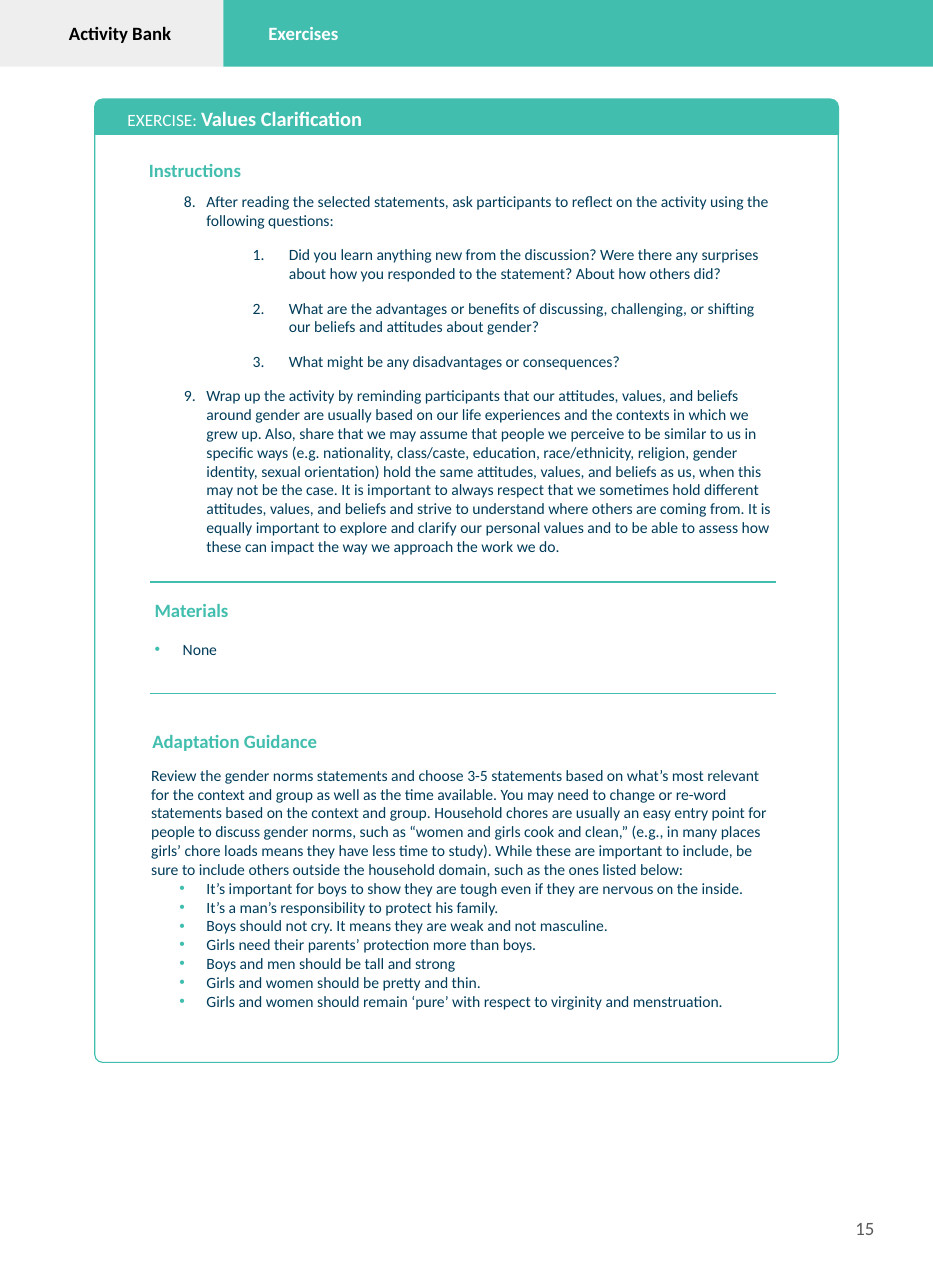
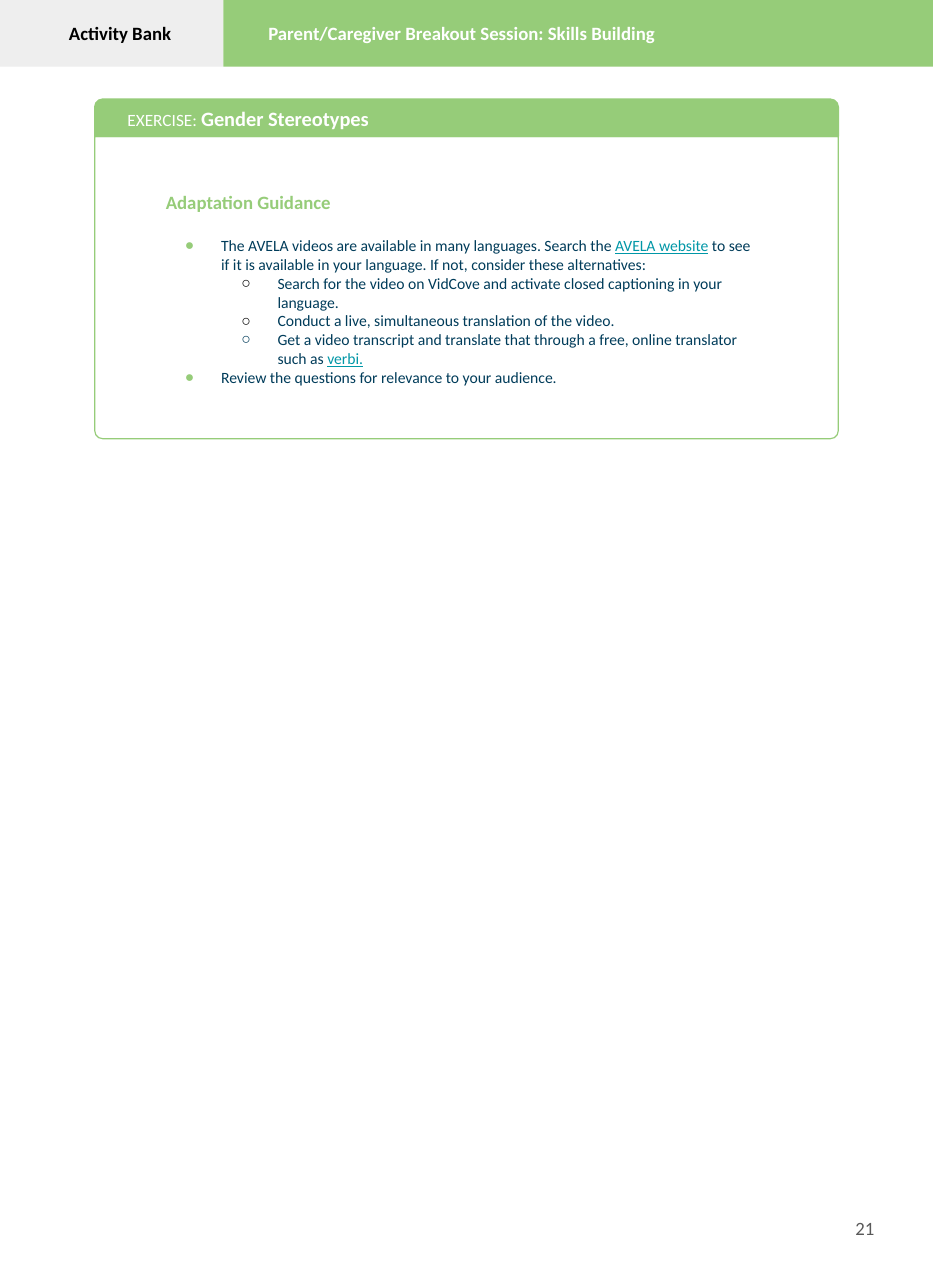
import pptx
import pptx.util
import pptx.dml.color
import pptx.enum.shapes
import pptx.enum.text
import pptx.oxml.ns
from lxml import etree
from dataclasses import dataclass

Inches = pptx.util.Inches
Pt = pptx.util.Pt
MSO_SHAPE = pptx.enum.shapes.MSO_SHAPE
ALIGN = pptx.enum.text.PP_ALIGN
ANCHOR = pptx.enum.text.MSO_ANCHOR


@dataclass(frozen=True)
class Theme:
    font: str = "Calibri"
    teal: str = "42BEAF"
    green: str = "96CC79"
    navy: str = "003C5A"
    link: str = "0097A7"
    grey: str = "EEEEEE"
    number: str = "595959"
    black: str = "000000"
    white: str = "FFFFFF"
    body: int = 10
    label: int = 11
    heading: int = 12
    title: int = 13


THEME = Theme()
BODY = dict(size=THEME.body, color=THEME.navy)
LINK = dict(color=THEME.link, underline=True)

# Shared frame, in inches
WIDTH, HEIGHT = 8.27, 11.42
BAND_HEIGHT, BAND_SPLIT = 0.59, 1.98
PANEL_LEFT, PANEL_TOP, PANEL_WIDTH, CORNER = 0.84, 0.88, 6.59, 0.07
RULE_LEFT, RULE_RIGHT = 1.33, 6.88

# List styles: left margin, hanging indent, bullet and so on
STEP = dict(left=0.27, hang=0.2, bullet_color=THEME.navy)
QUESTION = dict(left=1, hang=0.32, level=1, number=1, before=10,
                bullet_color=THEME.navy)
CIRCLE = dict(left=1, hang=0.32, level=1, bullet="○", bullet_color=THEME.black)


def dot(color, left, hang, bullet="•", **more):
    return dict(left=left, hang=hang, bullet=bullet, bullet_color=color, **more)


def heading(text, color):
    return text, dict(size=THEME.heading, color=color, bold=True, left=0.01)


# Content: each block is a place and a list of (text or spans, format)
STATEMENTS = [
    "It’s important for boys to show they are tough even if they are nervous on the inside.",
    "It’s a man’s responsibility to protect his family.",
    "Boys should not cry. It means they are weak and not masculine.",
    "Girls need their parents’ protection more than boys.",
    "Boys and men should be tall and strong",
    "Girls and women should be pretty and thin.",
    "Girls and women should remain ‘pure’ with respect to virginity and menstruation.",
]
QUESTIONS = [
    "Did you learn anything new from the discussion? Were there any surprises about how "
    "you responded to the statement? About how others did?",
    "What are the advantages or benefits of discussing, challenging, or shifting our "
    "beliefs and attitudes about gender?",
    "What might be any disadvantages or consequences?",
]
REFLECT = ("After reading the selected statements, ask participants to reflect on the "
           "activity using the following questions:")
WRAP_UP = (
    "Wrap up the activity by reminding participants that our attitudes, values, and beliefs "
    "around gender are usually based on our life experiences and the contexts in which we "
    "grew up. Also, share that we may assume that people we perceive to be similar to us in "
    "specific ways (e.g. nationality, class/caste, education, race/ethnicity, religion, "
    "gender identity, sexual orientation) hold the same attitudes, values, and beliefs as "
    "us, when this may not be the case. It is important to always respect that we sometimes "
    "hold different attitudes, values, and beliefs and strive to understand where others are "
    "coming from. It is equally important to explore and clarify our personal values and to "
    "be able to assess how these can impact the way we approach the work we do.")
REVIEW = (
    "Review the gender norms statements and choose 3-5 statements based on what’s most "
    "relevant for the context and group as well as the time available. You may need to "
    "change or re-word statements based on the context and group. Household chores are "
    "usually an easy entry point for people to discuss gender norms, such as “women and "
    "girls cook and clean,” (e.g., in many places girls’ chore loads means they have less "
    "time to study). While these are important to include, be sure to include others outside "
    "the household domain, such as the ones listed below:")

STATEMENT_DOT = dot(THEME.teal, 0.49, 0.24)
TIP_DOT = dot(THEME.green, 0.5, 0.32, "●")
PAGES = [
    dict(
        section="Exercises", title="Values Clarification", number="15", accent=THEME.teal,
        title_height=0.31, panel_bottom=9.42, rules=[5.16, 6.15],
        blocks=[
            ((1.31, 1.33, 5.22, 0.52), [heading("Instructions", THEME.teal)]),
            ((1.56, 1.62, 5.31, 3.33),
             [(REFLECT, dict(STEP, number=8))]
             + [(question, QUESTION) for question in QUESTIONS]
             + [(WRAP_UP, dict(STEP, number=9, before=10))]),
            ((1.36, 5.23, 5.58, 0.85),
             [heading("Materials", THEME.teal),
              ("None", dot(THEME.teal, 0.26, 0.25, before=9.8, spacing=1.15))]),
            ((1.34, 6.39, 5.49, 2.59),
             [heading("Adaptation Guidance", THEME.teal), (REVIEW, dict(before=8.5))]
             + [(statement, STATEMENT_DOT) for statement in STATEMENTS]),
        ]),
    dict(
        section="Parent/Caregiver Breakout Session: Skills Building",
        title="Gender Stereotypes", number="21", accent=THEME.green,
        title_height=0.33, panel_bottom=3.89, rules=[],
        blocks=[
            ((1.46, 1.61, 5.22, 2.02), [
                heading("Adaptation Guidance", THEME.green),
                ([("The AVELA videos are available in many languages. Search the ", {}),
                  ("AVELA website", LINK),
                  (" to see if it is available in your language. If not, consider these "
                   "alternatives:", {})], dict(TIP_DOT, before=14.6)),
                ("Search for the video on VidCove and activate closed captioning in your "
                 "language.", CIRCLE),
                ("Conduct a live, simultaneous translation of the video.", CIRCLE),
                ([("Get a video transcript and translate that through a free, online "
                   "translator such as ", {}), ("verbi.", LINK)],
                 dict(CIRCLE, bullet_color=THEME.navy)),
                ("Review the questions for relevance to your audience.", TIP_DOT),
            ]),
        ]),
]


def rgb(color):
    return pptx.dml.color.RGBColor.from_string(color)


def add_element(parent, tag, **attributes):
    return etree.SubElement(parent, pptx.oxml.ns.qn(tag), attributes)


def write(para, text, size=THEME.body, color=THEME.navy, bold=False, align=ALIGN.LEFT,
          left=0, hang=0, level=0, bullet=None, number=None, bullet_color=None,
          before=0, spacing=None):
    """Fill a paragraph with a string, or with (string, format) spans."""
    properties = para._p.get_or_add_pPr()
    properties.set("marL", str(Inches(left)))
    properties.set("indent", str(-Inches(hang)))
    if bullet or number:
        add_element(add_element(properties, "a:buClr"), "a:srgbClr", val=bullet_color)
        if bullet:
            add_element(properties, "a:buFont", typeface="Arial")
            add_element(properties, "a:buChar", char=bullet)
        else:
            add_element(properties, "a:buFont", typeface=THEME.font)
            add_element(properties, "a:buAutoNum", type="arabicPeriod", startAt=str(number))
    para.level, para.alignment = level, align
    if before:
        para.space_before = Pt(before)
    if spacing:
        para.line_spacing = spacing
    for words, own in [(text, {})] if isinstance(text, str) else text:
        span = para.add_run()
        span.text = words
        span.font.name = THEME.font
        span.font.size = Pt(own.get("size", size))
        span.font.bold = own.get("bold", bold)
        span.font.underline = own.get("underline", False)
        span.font.color.rgb = rgb(own.get("color", color))


def add_text(page, place, paragraphs, insets=(0, 0.08, 0, 0), anchor=ANCHOR.TOP):
    box = page.shapes.add_textbox(*map(Inches, place))
    frame = box.text_frame
    frame.word_wrap, frame.vertical_anchor = True, anchor
    (frame.margin_left, frame.margin_top,
     frame.margin_right, frame.margin_bottom) = map(Inches, insets)
    for index, (text, style) in enumerate(paragraphs):
        para = frame.add_paragraph() if index else frame.paragraphs[0]
        write(para, text, **style)


def add_block(page, kind, place, fill, line=None, weight=0.75):
    shape = page.shapes.add_shape(kind, *map(Inches, place))
    shape.shadow.inherit = False
    shape.fill.solid()
    shape.fill.fore_color.rgb = rgb(fill)
    if line:
        shape.line.color.rgb = rgb(line)
        shape.line.width = Pt(weight)
    else:
        shape.line.fill.background()
    return shape


def add_rule(page, top, color):
    rule = page.shapes.add_connector(
        pptx.enum.shapes.MSO_CONNECTOR.STRAIGHT,
        Inches(RULE_LEFT), Inches(top), Inches(RULE_RIGHT), Inches(top))
    rule.line.color.rgb = rgb(color)
    rule.line.width = Pt(0.75)
    add_element(rule._element.spPr, "a:effectLst")


def add_band(page, section, accent):
    add_block(page, MSO_SHAPE.RECTANGLE, (0, 0, BAND_SPLIT, BAND_HEIGHT), THEME.grey)
    add_block(page, MSO_SHAPE.RECTANGLE,
              (BAND_SPLIT, 0, WIDTH - BAND_SPLIT, BAND_HEIGHT), accent)
    label = dict(size=THEME.heading, bold=True)
    for left, width, text, style in [
            (0, 2.13, "Activity Bank", dict(label, color=THEME.black, align=ALIGN.CENTER)),
            (2.28, 5.31, section, dict(label, color=THEME.white))]:
        add_text(page, (left, 0.09, width, 0.57), [(text, style)], insets=(0.1,) * 4)


def add_panel(page, title, accent, title_height, bottom):
    body_top = PANEL_TOP + title_height
    body_height = bottom - body_top
    body = add_block(page, MSO_SHAPE.ROUND_2_SAME_RECTANGLE,
                     (PANEL_LEFT, body_top, PANEL_WIDTH, body_height), THEME.white, accent)
    body.adjustments[0] = 0
    body.adjustments[1] = CORNER / min(PANEL_WIDTH, body_height)
    header = add_block(page, MSO_SHAPE.ROUND_2_SAME_RECTANGLE,
                       (PANEL_LEFT, PANEL_TOP, PANEL_WIDTH, title_height), accent, accent, 1)
    header.adjustments[0] = CORNER / title_height
    spans = [("EXERCISE: ", {}), (title, dict(size=THEME.title, bold=True))]
    add_text(page, (1.12, 0.93, 4.83, 0.42),
             [(spans, dict(size=THEME.label, color=THEME.white, left=0.01))],
             insets=(0, 0.01, 0, 0))


def main():
    deck = pptx.Presentation()
    deck.slide_width, deck.slide_height = Inches(WIDTH), Inches(HEIGHT)
    for content in PAGES:
        page = deck.slides.add_slide(deck.slide_layouts[6])
        accent = content["accent"]
        add_band(page, content["section"], accent)
        add_panel(page, content["title"], accent,
                  content["title_height"], content["panel_bottom"])
        for top in content["rules"]:
            add_rule(page, top, accent)
        for place, paragraphs in content["blocks"]:
            add_text(page, place, paragraphs)
        # Page number
        add_text(page, (7.35, 10.45, 0.5, 0.87),
                 [(content["number"], dict(size=THEME.heading, color=THEME.number,
                                           align=ALIGN.RIGHT))],
                 insets=(0.1,) * 4, anchor=ANCHOR.MIDDLE)
    deck.save("out.pptx")


if __name__ == "__main__":
    main()
